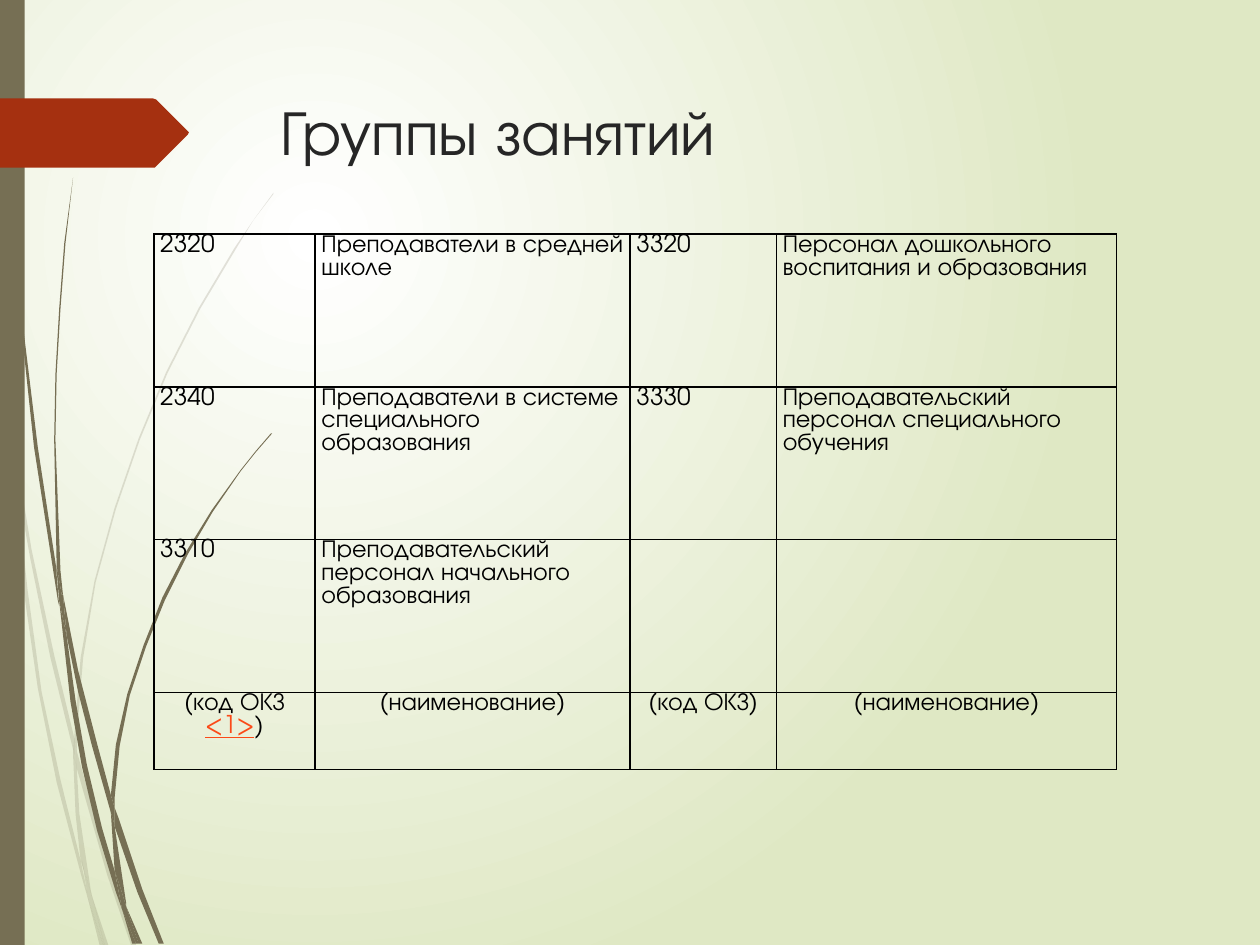
from lxml import etree
from pptx import Presentation
from pptx.dml.color import RGBColor
from pptx.enum.shapes import MSO_SHAPE
from pptx.enum.text import MSO_ANCHOR, MSO_AUTO_SIZE, PP_ALIGN
from pptx.oxml import parse_xml
from pptx.oxml.ns import nsdecls, qn
from pptx.util import Cm, Pt

RECTANGLE = MSO_SHAPE.RECTANGLE
TOP = MSO_ANCHOR.TOP
NO_AUTOFIT = MSO_AUTO_SIZE.NONE
LEFT, CENTER, JUSTIFY = PP_ALIGN.LEFT, PP_ALIGN.CENTER, PP_ALIGN.JUSTIFY

WHITE = RGBColor(0xFF, 0xFF, 0xFF)
PALE_GREEN = RGBColor(0xDF, 0xE8, 0xC4)
OLIVE = RGBColor(0x76, 0x6F, 0x54)
RUST = RGBColor(0xA5, 0x30, 0x10)
DARK_GREY = RGBColor(0x26, 0x26, 0x26)
BLACK = RGBColor(0x00, 0x00, 0x00)
LINK_ORANGE = RGBColor(0xFB, 0x4A, 0x18)

FONT = "TeX Gyre Adventor"
GRID_UNIT = Cm(0.0254)  # outline points below are counted in these units

FAINT_BLADES = [
    [(8, 350), (6, 322), (0, 282), (0, 299), (7, 344)],
    [(40, 522), (59, 599), (59, 586), (43, 520), (25, 436), (10, 345), (12, 376), (24, 443)],
    [(64, 607), (61, 596), (61, 610), (85, 694), (104, 750), (108, 750), (88, 692)],
    [(83, 750), (86, 750), (73, 711)],
    [(64, 683), (48, 619), (33, 549), (22, 469), (12, 376), (8, 350), (12, 410), (19, 470),
     (30, 546), (45, 621), (64, 693), (70, 714), (69, 707)],
    [(58, 599), (60, 646), (64, 683), (67, 692), (73, 711), (72, 706), (63, 646), (61, 610),
     (61, 608)],
    [(61, 584), (66, 522), (76, 462), (92, 404), (111, 349), (133, 296), (159, 245), (187, 198),
     (201, 175), (217, 154), (217, 153), (201, 175), (186, 197), (158, 244), (132, 295),
     (110, 348), (91, 403), (75, 461), (64, 522), (59, 584), (59, 586), (61, 596)],
    [(70, 714), (79, 750), (82, 750)],
    [(61, 608), (61, 610), (61, 596), (59, 586), (58, 599)],
    [(67, 692), (65, 683), (69, 707), (70, 714), (82, 750), (83, 750), (73, 711)],
]
SOLID_BLADES = [
    [(5, 110), (14, 233), (27, 355), (46, 477), (47, 481), (45, 457), (45, 453), (30, 355),
     (15, 232), (6, 109), (4, 48), (3, 0), (2, 0), (3, 48)],
    [(73, 592), (88, 645), (88, 633), (88, 631), (77, 590), (62, 532), (50, 472), (53, 505),
     (62, 549)],
    [(94, 649), (91, 641), (91, 656), (109, 708), (126, 749), (130, 749), (113, 706)],
    [(91, 691), (81, 657), (69, 607), (60, 556), (53, 505), (47, 477), (56, 557), (65, 608),
     (77, 659), (92, 708), (97, 722), (96, 717)],
    [(50, 472), (48, 453), (44, 349), (45, 297), (48, 245), (52, 193), (58, 141), (51, 193),
     (47, 245), (44, 297), (43, 349), (45, 449), (49, 472)],
    [(110, 749), (113, 749), (100, 719)],
    [(47, 477), (53, 505), (50, 472), (49, 472), (45, 449), (45, 453)],
    [(91, 633), (95, 592), (103, 552), (116, 513), (131, 476), (149, 440), (169, 406),
     (191, 374), (203, 359), (216, 344), (215, 344), (203, 358), (191, 373), (168, 405),
     (147, 439), (129, 474), (114, 512), (101, 551), (92, 591), (88, 631), (91, 641)],
    [(97, 722), (105, 749), (108, 749)],
    [(88, 645), (91, 691), (96, 706), (100, 719), (100, 716), (91, 656), (90, 651)],
    [(88, 645), (90, 651), (91, 656), (91, 641), (88, 631), (88, 633)],
    [(96, 706), (91, 691), (96, 717), (97, 722), (108, 749), (110, 749), (100, 719)],
]
TITLE_TAG = [(0, 78), (121, 78), (124, 79), (149, 104), (150, 105), (149, 107), (124, 132),
             (123, 133), (121, 133), (0, 133)]

COLUMN_WIDTHS = [3.25, 6.35, 2.95, 6.86]
ROW_HEIGHTS = [3.08, 3.08, 3.08, 1.55]
OCCUPATIONS = [
    ["2320", "Преподаватели в средней школе",
     "3320", "Персонал дошкольного воспитания и образования"],
    ["2340", "Преподаватели в системе специального образования",
     "3330", "Преподавательский персонал специального обучения"],
    ["3310", "Преподавательский персонал начального образования", "", ""],
    ["(код ОКЗ |<1>|)", "(наименование)", "(код ОКЗ)", "(наименование)"],
]


def paint(shape, color):
    """Give the shape a flat fill without outline or shadow."""
    shape.shadow.inherit = False
    shape.fill.solid()
    shape.fill.fore_color.rgb = color
    shape.line.fill.background()


def add_outline(shapes, points, color):
    builder = shapes.build_freeform(*points[0], scale=GRID_UNIT)
    builder.add_line_segments(points[1:], close=True)
    shape = builder.convert_to_shape()
    paint(shape, color)
    return shape


presentation = Presentation()
presentation.slide_width = Cm(25.4)
presentation.slide_height = Cm(19.05)
slide = presentation.slides.add_slide(presentation.slide_layouts[5])
shapes = slide.shapes

# Background: radial glow from the upper left
background = slide.background.fill
background.gradient()
for stop, position, color in zip(background.gradient_stops, (0, 1), (WHITE, PALE_GREEN)):
    stop.position = position
    stop.color.rgb = color
linear = next(slide.element.iter(qn("a:lin")))
linear.getparent().replace(linear, parse_xml(
    f'<a:path {nsdecls("a")} path="circle">'
    '<a:fillToRect l="50000" t="50000" r="100000" b="100000"/></a:path>'))

# Grass, side bar and title tag
for blade in FAINT_BLADES:
    shape = add_outline(shapes, blade, OLIVE)
    fill_color = next(shape.element.spPr.iter(qn("a:srgbClr")))
    etree.SubElement(fill_color, qn("a:alpha"), val="20000")
for blade in SOLID_BLADES:
    add_outline(shapes, blade, OLIVE)
side_bar = shapes.add_shape(RECTANGLE, Cm(0), Cm(0), Cm(0.5), presentation.slide_height)
paint(side_bar, OLIVE)
add_outline(shapes, TITLE_TAG, RUST)

# Title
title = shapes.title
title.left, title.top, title.width, title.height = Cm(5.41), Cm(1.73), Cm(18.31), Cm(3.56)
title.text_frame.auto_size = NO_AUTOFIT
title.text_frame.vertical_anchor = TOP
paragraph = title.text_frame.paragraphs[0]
paragraph.alignment = LEFT
run = paragraph.add_run()
run.text = "Группы занятий"
run.font.name = FONT
run.font.size = Pt(36)
run.font.color.rgb = DARK_GREY

# Table of occupation groups
table = shapes.add_table(len(ROW_HEIGHTS), len(COLUMN_WIDTHS), Cm(3.1), Cm(4.72),
                         Cm(sum(COLUMN_WIDTHS)), Cm(sum(ROW_HEIGHTS))).table
table.first_row = False
table.horz_banding = False
for column, width in zip(table.columns, COLUMN_WIDTHS):
    column.width = Cm(width)
for row, height in zip(table.rows, ROW_HEIGHTS):
    row.height = Cm(height)

for row_index, texts in enumerate(OCCUPATIONS):
    for column_index, text in enumerate(texts):
        cell = table.cell(row_index, column_index)
        cell.margin_left = cell.margin_right = Cm(0.13)
        cell.margin_top = cell.margin_bottom = Cm(0)
        for side in ("lnL", "lnR", "lnT", "lnB"):
            cell._tc.get_or_add_tcPr().append(parse_xml(
                f'<a:{side} {nsdecls("a")} w="{Pt(1)}"><a:solidFill>'
                f'<a:srgbClr val="{BLACK}"/></a:solidFill></a:{side}>'))
        cell.fill.background()
        if not text:
            continue
        paragraph = cell.text_frame.paragraphs[0]
        paragraph.line_spacing = Pt(13)
        if row_index == len(OCCUPATIONS) - 1:
            paragraph.alignment = CENTER
        else:
            paragraph.alignment = LEFT if column_index % 2 else JUSTIFY
        for part in text.split("|"):
            is_link = part == "<1>"
            run = paragraph.add_run()
            run.text = part
            run.font.name = FONT
            run.font.size = Pt(14)
            run.font.underline = is_link
            run.font.color.rgb = LINK_ORANGE if is_link else BLACK

presentation.save("out.pptx")
